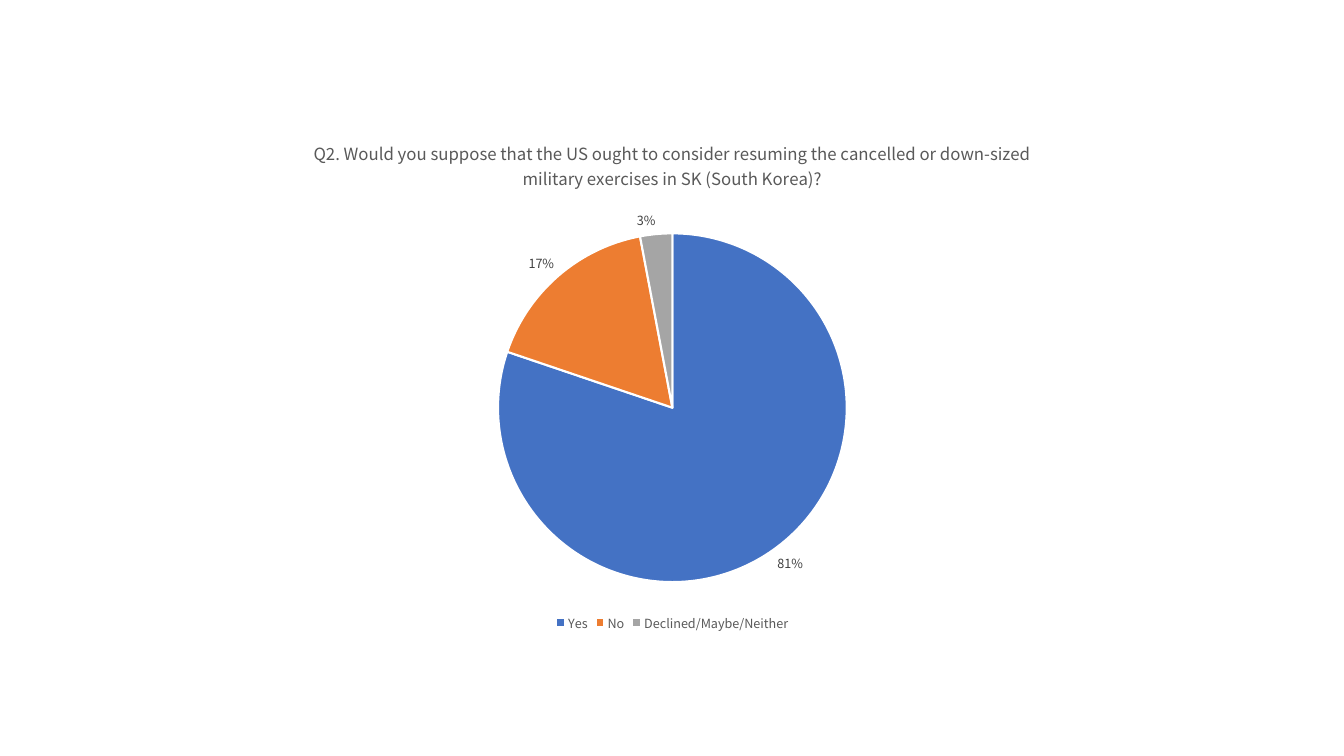
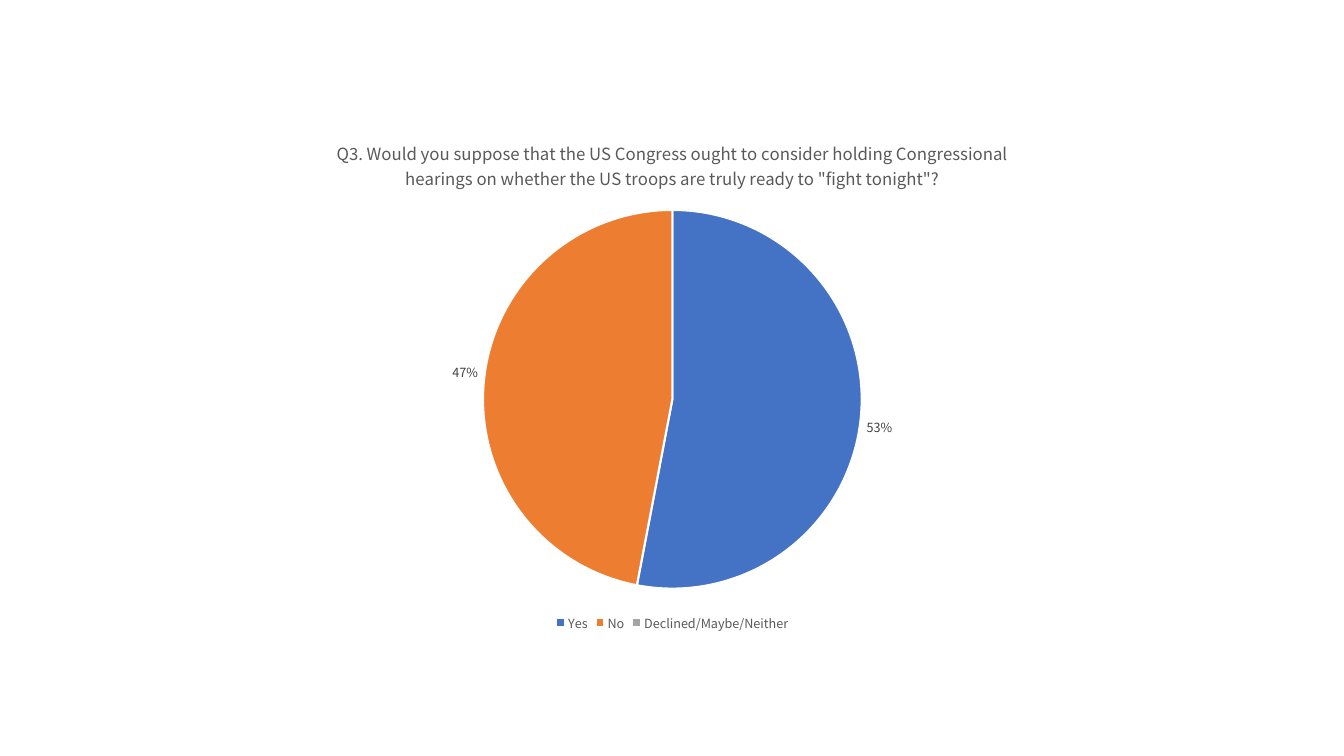
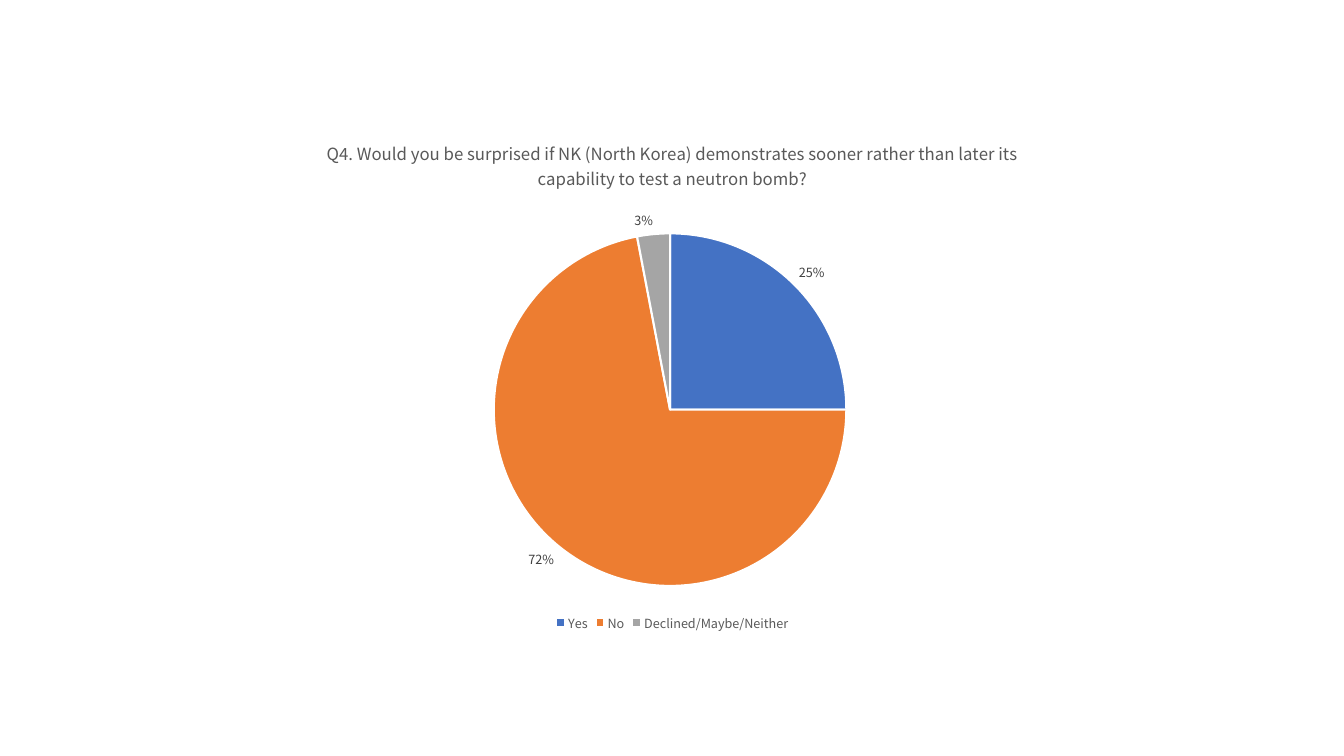
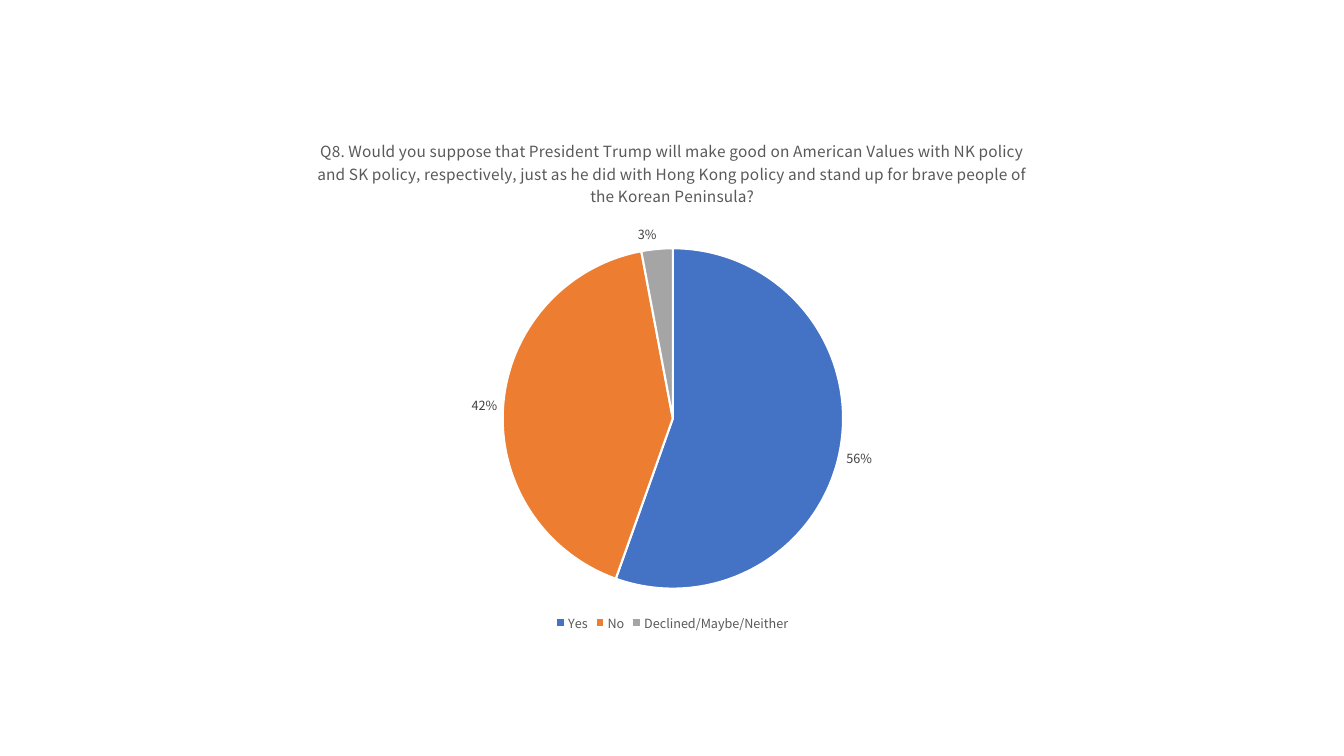
import pptx
import pptx.chart.data
import pptx.dml.color
import pptx.enum.chart
import pptx.oxml
import pptx.oxml.ns
import pptx.util

ANSWERS = ["Yes", "No", "Declined/Maybe/Neither"]

QUESTIONS = [
    ("Q2. Would you suppose that the US ought to consider resuming the cancelled "
     "or down-sized military exercises in SK (South Korea)?", (0.81, 0.17, 0.03), 12),
    ("Q3. Would you suppose that the US Congress ought to consider holding Congressional "
     "hearings on whether the US troops are truly ready to \"fight tonight\"?", (0.53, 0.47, 0), 12),
    ("Q4. Would you be surprised if NK (North Korea) demonstrates sooner rather than later "
     "its capability to test a neutron bomb?", (0.25, 0.72, 0.03), 12),
    ("Q8. Would you suppose that President Trump will make good on American Values with NK policy "
     "and SK policy, respectively, just as he did with Hong Kong policy and stand up for brave "
     "people of the Korean Peninsula?", (0.56, 0.42, 0.03), 11),
]


def color(value):
    return pptx.dml.color.RGBColor.from_string(value)


class SurveyDeck:
    font_name = "Noto Sans CJK KR"
    text_color = "595959"
    label_color = "404040"
    border_color = "FFFFFF"
    slice_colors = ("4472C4", "ED7D31", "A5A5A5")
    small_size = 9
    chart_frame = (5.44, 3.02, 23.01, 13)

    def __init__(self):
        self.presentation = pptx.Presentation()
        self.presentation.slide_width = pptx.util.Cm(33.87)
        self.presentation.slide_height = pptx.util.Cm(19.05)
        self.slide = None

    def add_slide(self):
        self.slide = self.presentation.slides.add_slide(self.presentation.slide_layouts[6])

    def style_font(self, font, size, font_color):
        font.name = self.font_name
        font.size = pptx.util.Pt(size)
        font.bold = False
        font.color.rgb = color(font_color)

    def add_pie(self, question, shares, title_size):
        data = pptx.chart.data.CategoryChartData(number_format="0%")
        data.categories = ANSWERS
        data.add_series(question, shares)
        frame = [pptx.util.Cm(length) for length in self.chart_frame]
        chart = self.slide.shapes.add_chart(
            pptx.enum.chart.XL_CHART_TYPE.PIE, *frame, data).chart
        self.style_font(chart.font, 10, "000000")
        self.add_title(chart, question, title_size)
        self.add_legend(chart)
        chart.plots[0].vary_by_categories = True
        series = chart.plots[0].series[0]
        self.style_slices(series)
        self.add_labels(series, shares)

    def add_title(self, chart, question, size):
        chart.has_title = True
        text_frame = chart.chart_title.text_frame
        text_frame.text = question
        self.style_font(text_frame.paragraphs[0].runs[0].font, size, self.text_color)

    def add_legend(self, chart):
        chart.has_legend = True
        chart.legend.position = pptx.enum.chart.XL_LEGEND_POSITION.BOTTOM
        chart.legend.include_in_layout = False
        self.style_font(chart.legend.font, self.small_size, self.text_color)

    def style_slices(self, series):
        for index, slice_color in enumerate(self.slice_colors):
            slice_format = series.points[index].format
            slice_format.fill.solid()
            slice_format.fill.fore_color.rgb = color(slice_color)
            slice_format.line.color.rgb = color(self.border_color)
            slice_format.line.width = pptx.util.Pt(1.5)

    def add_labels(self, series, shares):
        labels = series.data_labels
        labels.show_value = True
        labels.show_percentage = False
        labels.number_format = "0%"
        labels.number_format_is_linked = False
        labels.position = pptx.enum.chart.XL_LABEL_POSITION.OUTSIDE_END
        self.style_font(labels.font, self.small_size, self.label_color)
        label_list = series._element.find(pptx.oxml.ns.qn("c:dLbls"))
        empty = [index for index, share in enumerate(shares) if share == 0]
        for position, index in enumerate(empty):
            label_list.insert(position, pptx.oxml.parse_xml(
                f'<c:dLbl {pptx.oxml.ns.nsdecls("c")}>'
                f'<c:idx val="{index}"/><c:delete val="1"/></c:dLbl>'))


def main():
    deck = SurveyDeck()
    for question, shares, title_size in QUESTIONS:
        deck.add_slide()
        deck.add_pie(question, shares, title_size)
    deck.presentation.save("out.pptx")


if __name__ == "__main__":
    main()
